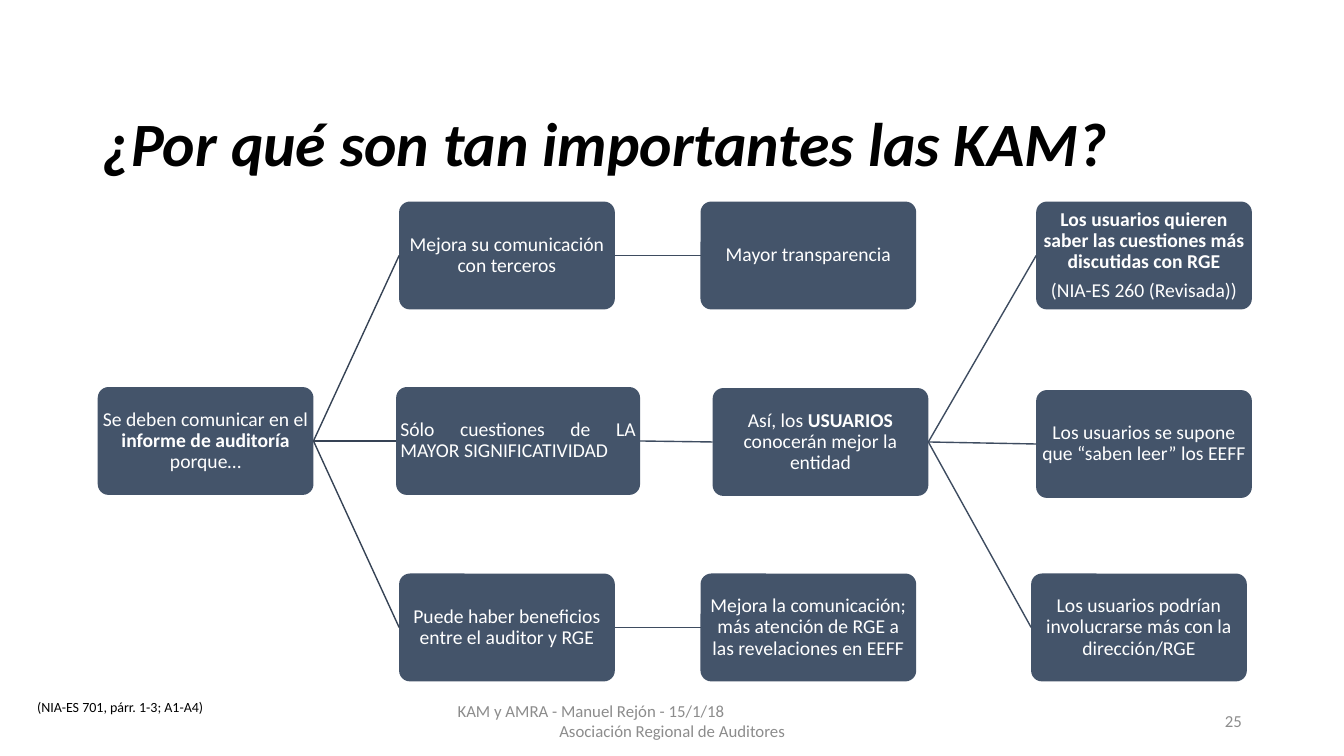
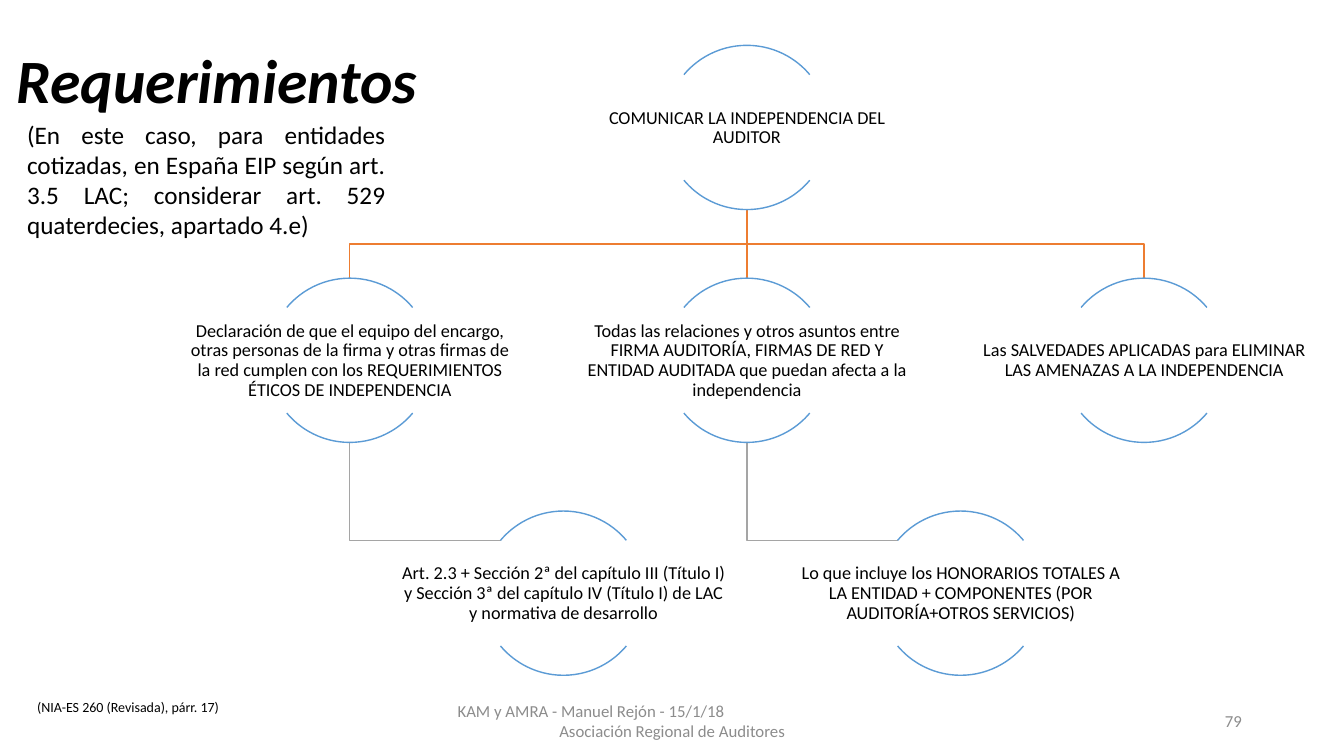
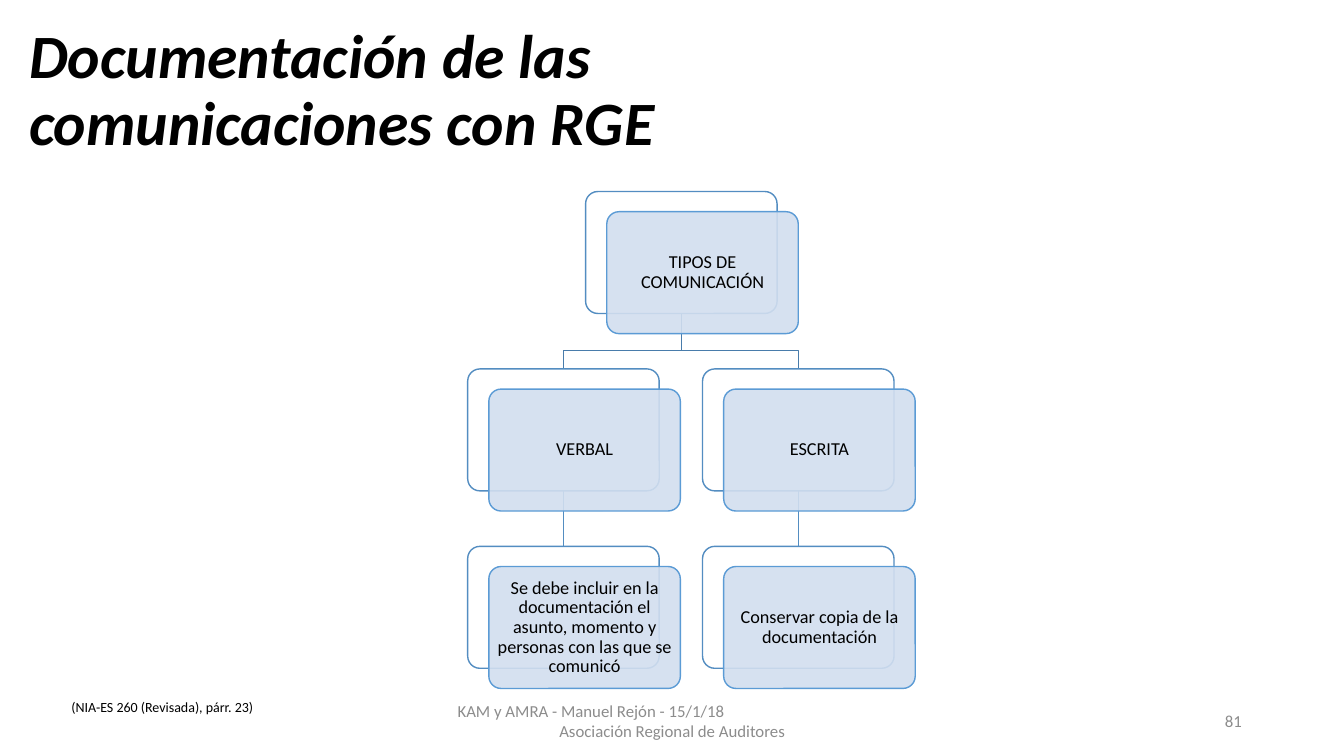
from lxml import etree
from pptx import Presentation
from pptx import util as u
from pptx.dml.color import RGBColor
from pptx.enum import shapes, text
from pptx.oxml.ns import qn

FONT = "Calibri"
BLACK, WHITE, GREY = "000000", "FFFFFF", "8C8C8C"
NAVY, BLUE, PALE = "44546A", "5B9BD5", "D2DEEF"
EDGE, STEM, ORANGE, SILVER = "538DC1", "497CAB", "ED7D31", "A5A5A5"
DARK, INK = "364355", "3E4C60"
LEFT, MID, RIGHT, JUST = (text.PP_ALIGN.LEFT, text.PP_ALIGN.CENTER,
                          text.PP_ALIGN.RIGHT, text.PP_ALIGN.JUSTIFY)
ROUND, ARC = shapes.MSO_SHAPE.ROUNDED_RECTANGLE, shapes.MSO_SHAPE.ARC


def color(code):
    """Turn a hex string into a colour."""
    return RGBColor.from_string(code)


def inches(*nums):
    """Turn numbers into inch lengths."""
    return [u.Inches(n) for n in nums]


def write(shape, lines, size, code=BLACK, align=LEFT, inset=None, lead=1, gap=0, middle=True):
    """Fill a shape with paragraphs; asterisks switch bold on and off."""
    frame = shape.text_frame
    frame.word_wrap = True
    frame.vertical_anchor = text.MSO_ANCHOR.MIDDLE if middle else text.MSO_ANCHOR.TOP
    if inset is not None:
        frame.margin_left = frame.margin_right = u.Inches(inset)
        frame.margin_top = frame.margin_bottom = u.Inches(inset)
    for num, line in enumerate(lines):
        para = frame.add_paragraph() if num else frame.paragraphs[0]
        para.alignment, para.line_spacing, para.space_after = align, lead, u.Pt(gap)
        para.font.name, para.font.size = FONT, u.Pt(size)
        para.font.color.rgb = color(code)
        for odd, part in enumerate(line.split("*")):
            if part:
                run = para.add_run()
                run.text = part
                if odd % 2:
                    run.font.bold = True
    return frame


def label(slide, box, lines, size, **style):
    """Add a text box."""
    return write(slide.shapes.add_textbox(*inches(*box)), lines, size, **style)


def stroke(shape, code):
    """Give a shape a thin line."""
    shape.line.color.rgb = color(code)
    shape.line.width = u.Pt(1)


def card(slide, box, fill, line=None, alpha=None):
    """Add a rounded box."""
    shape = slide.shapes.add_shape(ROUND, *inches(*box))
    shape.shadow.inherit = False
    shape.adjustments[0] = 0.1
    shape.fill.solid()
    shape.fill.fore_color.rgb = color(fill)
    if alpha:
        tint = shape.fill._xPr.find(qn("a:solidFill"))[0]
        etree.SubElement(tint, qn("a:alpha")).set("val", str(alpha * 1000))
    if line:
        stroke(shape, line)
    else:
        shape.line.fill.background()
    return shape


def link(slide, start, end, code):
    """Add a straight line between two points."""
    line = slide.shapes.add_connector(shapes.MSO_CONNECTOR.STRAIGHT, *inches(*start, *end))
    stroke(line, code)
    etree.SubElement(line._element.spPr, qn("a:effectLst"))
    return line


def route(slide, points, code):
    """Draw one bent line through the points."""
    first, *rest = [inches(*point) for point in points]
    pen = slide.shapes.build_freeform(*first)
    pen.add_line_segments(rest, close=False)
    bent = pen.convert_to_shape()
    bent.shadow.inherit = False
    bent.fill.background()
    stroke(bent, code)


def ring(slide, mid, top, words):
    """Add a text between an upper and a lower arc."""
    size = 1.63
    for start in (132, 24):
        arc = slide.shapes.add_shape(ARC, *inches(mid - size / 2, top, size, size))
        arc.shadow.inherit = False
        arc.adjustments[0], arc.adjustments[1] = start, start + 60
        arc.fill.background()
        stroke(arc, BLUE)
    label(slide, (mid - size, top + 0.3, 2 * size, 1.04), [words], 13,
          align=MID, inset=0.01, lead=0.9, gap=4.5)


def stack(slide, mid, top, words):
    """Add a tinted card in front of a white one."""
    wide, high = 1.9, 1.21
    card(slide, (mid - wide / 2, top, wide, high), WHITE, EDGE)
    front = card(slide, (mid - wide / 2 + 0.21, top + 0.2, wide, high), PALE, BLUE, 90)
    write(front, [words], 13, align=MID, inset=0.05, lead=0.9, gap=4.5)


def page(deck, title, left, top, note, side, num):
    """Add a slide with title, note, footer and number."""
    slide = deck.slides.add_slide(deck.slide_layouts[6])
    head = label(slide, (left, top, 11.5, 1.45), title, 44, lead=0.9)
    for para in head.paragraphs:
        para.font.bold = para.font.italic = True
    foot = label(slide, (4.42, 6.95, 4.5, 0.4),
                 ["KAM y AMRA - Manuel Rejón - 15/1/18", "Asociación Regional de Auditores"],
                 12, code=GREY, align=MID)
    foot.paragraphs[0].alignment = LEFT
    foot.margin_left = foot.margin_right = u.Inches(0.12)
    label(slide, (side, 6.88, 2.7, 0.27), [note], 10, middle=False)
    label(slide, (9.42, 6.95, 3, 0.4), [num], 12, code=GREY, align=RIGHT)
    return slide


def reasons(deck):
    """Build the slide on why KAM matter."""
    slide = page(deck, ["¿Por qué son tan importantes las KAM?"], 0.92, 0.73,
                 "(NIA-ES 701, párr. 1-3; A1-A4)", 0.27, "25")
    wide, high = 2.14, 1.07
    high_row, low_row = 2, 5.69
    nodes = {
        "root": (0.97, 3.84, ["Se deben comunicar en el *informe de auditoría *porque…"]),
        "talk": (3.96, high_row, ["Mejora su comunicación con terceros"]),
        "clear": (6.95, high_row, ["Mayor transparencia"]),
        "key": (3.93, 3.84, ["Sólo cuestiones de LA MAYOR SIGNIFICATIVIDAD"]),
        "users": (7.07, 3.85, ["Así, los *USUARIOS* conocerán mejor la entidad"]),
        "want": (10.28, high_row,
                 ["*Los usuarios quieren saber las cuestiones más discutidas con RGE*",
                  "(NIA-ES 260 (Revisada))"]),
        "read": (10.28, 3.87, ["Los usuarios se supone que “saben leer” los EEFF"]),
        "join": (10.23, low_row, ["Los usuarios podrían involucrarse más con la dirección/RGE"]),
        "gain": (3.96, low_row, ["Puede haber beneficios entre el auditor y RGE"]),
        "care": (6.95, low_row,
                 ["Mejora la comunicación; más atención de RGE a las revelaciones en EEFF"]),
    }
    cards = {}
    for name, (left, top, lines) in nodes.items():
        main_key = name == "key"
        cards[name] = card(slide, (left, top, 2.42 if main_key else wide, high), NAVY)
        write(cards[name], lines, 14, code=WHITE, align=JUST if main_key else MID,
              inset=0.01, lead=0.9, gap=4.9)
    tree = {"root": ("talk", "key", "gain"), "talk": ("clear",), "key": ("users",),
            "gain": ("care",), "users": ("want", "read", "join")}
    for name, kids in tree.items():
        for kid in kids:
            line = link(slide, (0, 0), (1, 1), DARK if name == "root" else INK)
            line.begin_connect(cards[name], 3)
            line.end_connect(cards[kid], 1)


def needs(deck):
    """Build the slide on requirements."""
    slide = page(deck, ["Requerimientos"], 0.07, 0.1,
                 "(NIA-ES 260 (Revisada), párr. 17)", 0.27, "79")
    label(slide, (0.17, 1.13, 3.75, 1.31),
          ["(En este caso, para entidades cotizadas, en España EIP según art. 3.5 LAC; "
           "considerar art. 529 quaterdecies, apartado 4.e)"], 18, align=JUST, middle=False)
    cols = [3.47 + 3.94 * n for n in range(3)]
    rows = [0.45 + 2.31 * n for n in range(3)]
    size, bend, shift = 1.63, 2.42, 2.12
    mid, base = cols[1], rows[0] + size
    for col in (cols[0], cols[2]):
        route(slide, [(mid, base), (mid, bend), (col, bend), (col, rows[1])], ORANGE)
    link(slide, (mid, base), (mid, rows[1]), ORANGE)
    for col in cols[:2]:
        low = rows[2] + 0.29
        route(slide, [(col, rows[1] + size), (col, low), (col + 1.5, low)], SILVER)
    ring(slide, mid, rows[0], "COMUNICAR LA INDEPENDENCIA DEL AUDITOR")
    duties = [
        "Declaración de que el equipo del encargo, otras personas de la firma y otras firmas "
        "de la red cumplen con los REQUERIMIENTOS ÉTICOS DE INDEPENDENCIA",
        "Todas las relaciones y otros asuntos entre FIRMA AUDITORÍA, FIRMAS DE RED Y ENTIDAD "
        "AUDITADA que puedan afecta a la independencia",
        "Las SALVEDADES APLICADAS para ELIMINAR LAS AMENAZAS A LA INDEPENDENCIA",
    ]
    details = [
        "Art. 2.3 + Sección 2ª del capítulo III (Título I) y Sección 3ª del capítulo IV "
        "(Título I) de LAC y normativa de desarrollo",
        "Lo que incluye los HONORARIOS TOTALES A LA ENTIDAD + COMPONENTES "
        "(POR AUDITORÍA+OTROS SERVICIOS)",
    ]
    for col, words in zip(cols, duties):
        ring(slide, col, rows[1], words)
    for col, words in zip(cols, details):
        ring(slide, col + shift, rows[2], words)


def records(deck):
    """Build the slide on documentation."""
    slide = page(deck, ["Documentación de las", "comunicaciones con RGE"], 0.19, 0.19,
                 "(NIA-ES 260 (Revisada), párr. 23)", 0.61, "81")
    mid, bend, high = 6.76, 3.48, 1.21
    rows = [1.9 + 1.76 * n for n in range(3)]
    kinds = {
        5.59: ("VERBAL", "Se debe incluir en la documentación el asunto, momento y personas "
                         "con las que se comunicó"),
        7.92: ("ESCRITA", "Conservar copia de la documentación"),
    }
    for col in kinds:
        route(slide, [(mid, rows[0] + high), (mid, bend), (col, bend), (col, rows[1])], STEM)
        link(slide, (col, rows[1] + high), (col, rows[2]), EDGE)
    stack(slide, mid, rows[0], "TIPOS DE COMUNICACIÓN")
    for col, pair in kinds.items():
        for row, words in zip(rows[1:], pair):
            stack(slide, col, row, words)


def main():
    """Build and save the deck."""
    deck = Presentation()
    deck.slide_width, deck.slide_height = inches(40 / 3, 7.5)
    for build in (reasons, needs, records):
        build(deck)
    deck.save("out.pptx")


if __name__ == "__main__":
    main()
